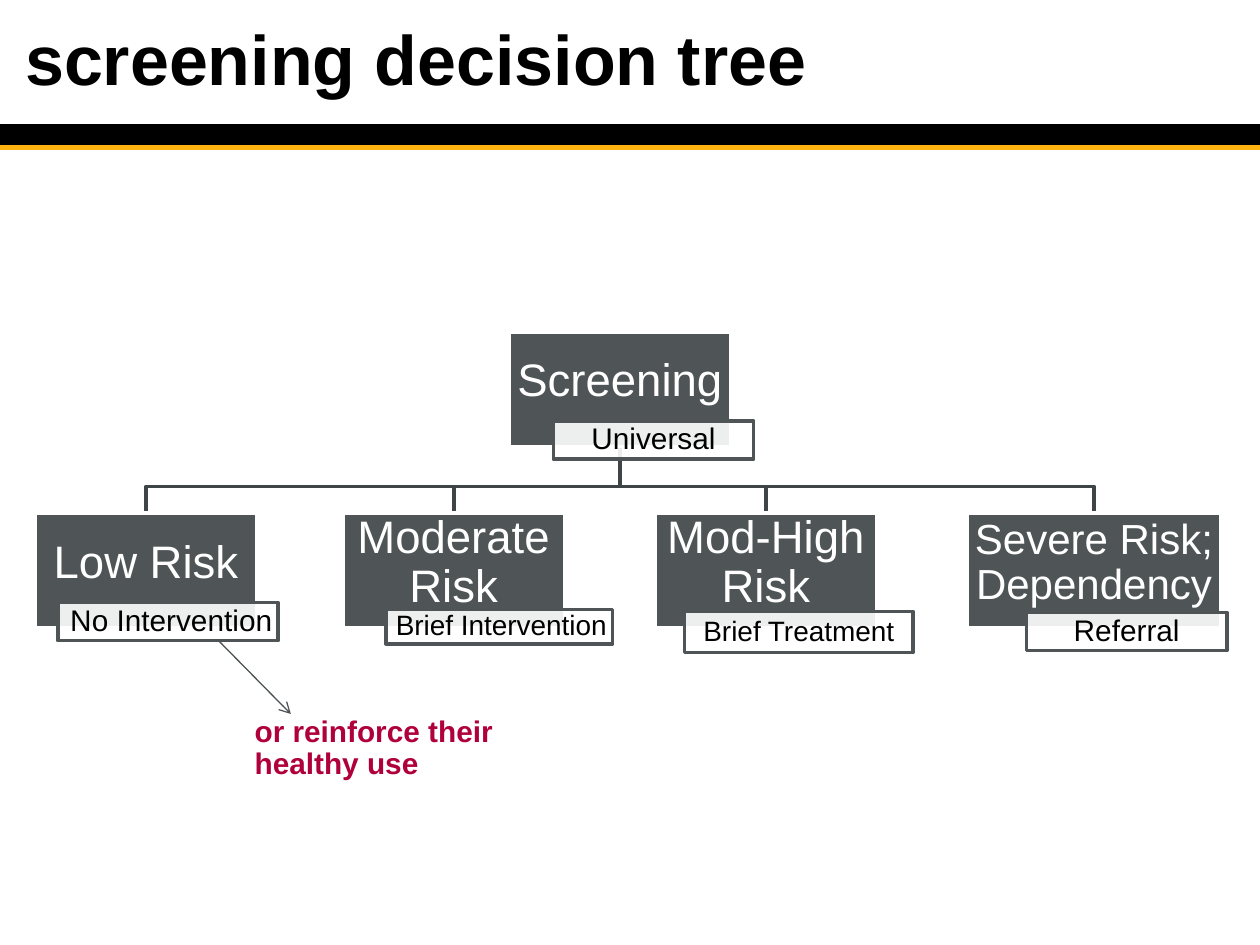
from dataclasses import dataclass

import pptx
import pptx.dml.color
import pptx.enum.shapes
import pptx.enum.text
import pptx.oxml.ns
import pptx.util
from lxml import etree

Pt = pptx.util.Pt
ALIGN = pptx.enum.text.PP_ALIGN
ANCHOR = pptx.enum.text.MSO_ANCHOR
RECT = pptx.enum.shapes.MSO_SHAPE.RECTANGLE
qn = pptx.oxml.ns.qn

SLATE, LINK, WHITE, BLACK = "4F5557", "3F4446", "FFFFFF", "000000"
GOLD, RED = "FFB310", "B0003B"
CARD_H = 65.6
ROOT_TOP, LEAF_TOP, BUS = 189.6, 293.2, 277.9


@dataclass
class Box:
    left: float
    top: float
    width: float
    height: float


@dataclass
class Style:
    size: float
    color: str
    align: ALIGN = ALIGN.CENTER
    bold: bool = False
    lead: object = 0.9
    pad: tuple = (0, 0, 0, 0)
    anchor: ANCHOR = ANCHOR.MIDDLE
    after: float = 0


@dataclass
class Node:
    text: str
    card: Box
    size: float
    note: str
    tag: Box
    small: float = 17
    align: ALIGN = ALIGN.CENTER

    @property
    def mid(self) -> float:
        return self.card.left + self.card.width / 2


ROOT = Node("Screening", Box(291, ROOT_TOP, 126.6, CARD_H), 26,
            "Universal", Box(316.2, 240.6, 114.5, 21.8))
LEAVES = [
    Node("Low Risk", Box(20.2, LEAF_TOP, 126.6, CARD_H), 26,
         "No Intervention", Box(33, 344.3, 126, 21.8), align=ALIGN.RIGHT),
    Node("Moderate Risk", Box(196, LEAF_TOP, 126.6, CARD_H), 26,
         "Brief Intervention", Box(220.5, 348.4, 129.6, 19.5), 16, ALIGN.RIGHT),
    Node("Mod-High Risk", Box(374.4, LEAF_TOP, 126.6, CARD_H), 26,
         "Brief Treatment", Box(391.2, 349.3, 130.6, 23.6), 16),
    Node("Severe Risk; Dependency", Box(552.8, LEAF_TOP, 144.6, CARD_H), 24,
         "Referral", Box(586.6, 350, 114.5, 21.8)),
]


def rgb(code: str):
    return pptx.dml.color.RGBColor.from_string(code)


def write(shape, text: str, style: Style) -> None:
    frame = shape.text_frame
    frame.word_wrap = True
    frame.vertical_anchor = style.anchor
    (frame.margin_left, frame.margin_top,
     frame.margin_right, frame.margin_bottom) = map(Pt, style.pad)
    para = frame.paragraphs[0]
    para.text = text
    para.alignment = style.align
    para.line_spacing = style.lead
    para.space_after = Pt(style.after)
    for run in para.runs:
        font = run.font
        font.name, font.size, font.bold = "Arial", Pt(style.size), style.bold
        font.color.rgb = rgb(style.color)


def spot(box: Box) -> list:
    return [Pt(n) for n in (box.left, box.top, box.width, box.height)]


def add_rect(slide, box: Box, fill: str, edge: str, alpha: int = 100):
    shape = slide.shapes.add_shape(RECT, *spot(box))
    shape.shadow.inherit = False
    shape.fill.solid()
    shape.fill.fore_color.rgb = rgb(fill)
    shape.line.color.rgb = rgb(edge)
    shape.line.width = Pt(2)
    if alpha < 100:
        tint = shape._element.spPr.find(qn("a:solidFill"))[0]
        etree.SubElement(tint, qn("a:alpha")).set("val", str(alpha * 1000))
    return shape


def add_text(slide, box: Box, text: str, style: Style) -> None:
    write(slide.shapes.add_textbox(*spot(box)), text, style)


def add_link(slide, root: Node, leaf: Node) -> None:
    """Draw an elbow from the root card down to a leaf card."""
    start = root.card.top + root.card.height
    turns = [(root.mid, BUS), (leaf.mid, BUS), (leaf.mid, leaf.card.top)]
    path = slide.shapes.build_freeform(Pt(root.mid), Pt(start))
    path.add_line_segments([(Pt(x), Pt(y)) for x, y in turns], close=False)
    shape = path.convert_to_shape()
    shape.shadow.inherit = False
    shape.fill.background()
    shape.line.color.rgb = rgb(LINK)
    shape.line.width = Pt(2)


def add_node(slide, node: Node) -> None:
    card = add_rect(slide, node.card, SLATE, WHITE)
    write(card, node.text,
          Style(node.size, WHITE, pad=(1.3, 1.3, 1.3, 9.2), after=9))
    tag = add_rect(slide, node.tag, WHITE, SLATE, 90)
    write(tag, node.note,
          Style(node.small, BLACK, node.align, pad=(3.3, 0.8, 3.3, 0.8), after=6))


def add_arrow(slide, x1: float, y1: float, x2: float, y2: float) -> None:
    line = slide.shapes.add_connector(
        pptx.enum.shapes.MSO_CONNECTOR.STRAIGHT, Pt(x1), Pt(y1), Pt(x2), Pt(y2))
    line.line.color.rgb = rgb("4D5355")
    line.line.width = Pt(0.75)
    etree.SubElement(line.line._get_or_add_ln(), qn("a:tailEnd")).set("type", "arrow")
    etree.SubElement(line._element.spPr, qn("a:effectLst"))


def main() -> None:
    deck = pptx.Presentation()
    deck.slide_width, deck.slide_height = Pt(720), Pt(540)
    slide = deck.slides.add_slide(deck.slide_layouts[6])

    add_rect(slide, Box(0, 80.8, 720, 3.8), GOLD, GOLD)
    add_rect(slide, Box(0, 72, 720, 10), BLACK, BLACK)
    add_text(slide, Box(0, 0, 720, 78), "screening decision tree",
             Style(40, BLACK, ALIGN.LEFT, True, Pt(36), (14.4, 0, 36, 0)))

    add_arrow(slide, 124.8, 366, 166.2, 408)
    for leaf in reversed(LEAVES):
        add_link(slide, ROOT, leaf)
    for node in [ROOT, *LEAVES]:
        add_node(slide, node)

    add_text(slide, Box(145.5, 409.8, 150, 45), "or reinforce their healthy use",
             Style(17, RED, ALIGN.LEFT, True, pad=(0, 0, 7.2, 3.6),
                   anchor=ANCHOR.TOP))
    deck.save("out.pptx")


if __name__ == "__main__":
    main()
